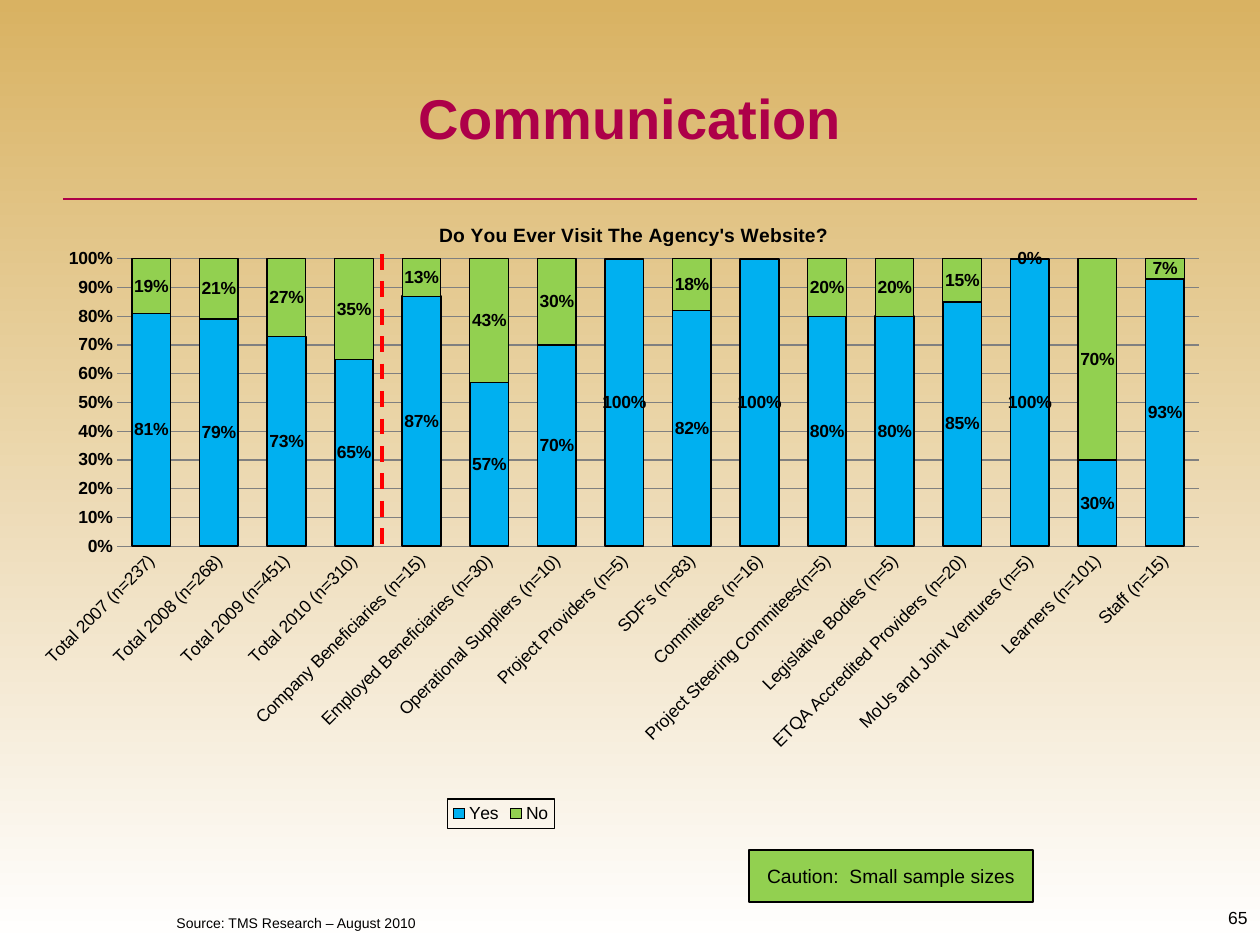
from typing import NamedTuple

from lxml.etree import SubElement
from pptx import Presentation
from pptx.chart.data import CategoryChartData
from pptx.dml.color import RGBColor
from pptx.enum.chart import XL_CHART_TYPE, XL_LEGEND_POSITION, XL_TICK_MARK
from pptx.enum.dml import MSO_LINE
from pptx.enum.shapes import MSO_CONNECTOR, MSO_SHAPE
from pptx.enum.text import MSO_ANCHOR, PP_ALIGN
from pptx.oxml import parse_xml
from pptx.oxml.ns import nsdecls, qn
from pptx.util import Emu, Pt

EMU_PER_PX = 914400 / 126
FONT = "Arial"
GOLD = RGBColor(0xD9, 0xB2, 0x62)
WHITE = RGBColor(0xFF, 0xFF, 0xFF)
BLACK = RGBColor(0, 0, 0)
MAROON = RGBColor(0xAD, 0x00, 0x49)
RED = RGBColor(0xFF, 0, 0)
GREY = RGBColor(0x80, 0x80, 0x80)
BLUE = RGBColor(0x00, 0xB0, 0xF0)
GREEN = RGBColor(0x92, 0xD0, 0x50)


class Answer(NamedTuple):
    name: str
    shares: tuple
    color: RGBColor
    border: float


class Rule(NamedTuple):
    start: tuple[int, int]
    end: tuple[int, int]
    color: RGBColor
    weight: float
    dash: MSO_LINE | None = None


GROUPS = (
    "Total 2007 (n=237)", "Total 2008 (n=268)", "Total 2009 (n=451)",
    "Total 2010 (n=310)", "Company Beneficiaries (n=15)",
    "Employed Beneficiaries (n=30)", "Operational Suppliers (n=10)",
    "Project Providers (n=5)", "SDF's (n=83)", "Committees (n=16)",
    "Project Steering Commitees(n=5)", "Legislative Bodies (n=5)",
    "ETQA Accredited Providers (n=20)", "MoUs and Joint Ventures (n=5)",
    "Learners (n=101)", "Staff (n=15)",
)
ANSWERS = (
    Answer("Yes", (0.81, 0.79, 0.73, 0.65, 0.87, 0.57, 0.7, 1, 0.82, 1, 0.8,
                   0.8, 0.85, 1, 0.3, 0.93), BLUE, 1),
    Answer("No", (0.19, 0.21, 0.27, 0.35, 0.13, 0.43, 0.3, None, 0.18, None,
                  0.2, 0.2, 0.15, 0, 0.7, 0.07), GREEN, 0.75),
)
RULES = (
    Rule((63, 199), (1197, 199), MAROON, 0.75),
    Rule((382, 254), (382, 547), RED, 2.25, MSO_LINE.DASH),
)


def px(length: int) -> Emu:
    return Emu(round(length * EMU_PER_PX))


def style_font(font, size: float, color: RGBColor = BLACK, bold: bool = False) -> None:
    font.name = FONT
    font.size = Pt(size)
    font.bold = bold
    font.color.rgb = color


def write(frame, text: str, *, size: float, color: RGBColor = BLACK,
          bold: bool = False, align=PP_ALIGN.LEFT, anchor=MSO_ANCHOR.TOP) -> None:
    frame.word_wrap = True
    frame.vertical_anchor = anchor
    paragraph = frame.paragraphs[0]
    paragraph.alignment = align
    run = paragraph.add_run()
    run.text = text
    style_font(run.font, size, color, bold)


def draw_rule(slide, rule: Rule) -> None:
    connector = slide.shapes.add_connector(
        MSO_CONNECTOR.STRAIGHT, *map(px, rule.start + rule.end))
    connector.line.color.rgb = rule.color
    connector.line.width = Pt(rule.weight)
    if rule.dash:
        connector.line.dash_style = rule.dash
    SubElement(connector._element.spPr, qn("a:effectLst"))


def set_layout(parent, index: int, inner: bool = False, **fractions: float) -> None:
    for old in parent.findall(qn("c:layout")):
        parent.remove(old)
    layout = parse_xml(f"<c:layout {nsdecls('c')}><c:manualLayout/></c:layout>")
    settings = {"layoutTarget": "inner"} if inner else {}
    settings |= {"xMode": "edge", "yMode": "edge"} | fractions
    for tag, value in settings.items():
        SubElement(layout[0], qn(f"c:{tag}")).set("val", str(value))
    parent.insert(index, layout)


def style_answer(series, answer: Answer) -> None:
    series.format.fill.solid()
    series.format.fill.fore_color.rgb = answer.color
    series.format.line.color.rgb = BLACK
    series.format.line.width = Pt(answer.border)
    labels = series.data_labels
    labels.show_value = True
    labels.number_format = "0%"
    labels.number_format_is_linked = False
    style_font(labels.font, 10, bold=True)


def style_axes(chart) -> None:
    groups, share = chart.category_axis, chart.value_axis
    for axis in (groups, share):
        axis.minor_tick_mark = XL_TICK_MARK.NONE
        axis.major_tick_mark = XL_TICK_MARK.NONE
    style_font(groups.tick_labels.font, 10)
    groups.format.line.color.rgb = GREY
    groups._element.find(qn("c:txPr")).find(qn("a:bodyPr")).set("rot", "-2700000")
    style_font(share.tick_labels.font, 10, bold=True)
    share.tick_labels.number_format = "0%"
    share.tick_labels.number_format_is_linked = False
    share.minimum_scale, share.maximum_scale, share.major_unit = 0, 1, 0.1
    share.format.line.fill.background()
    share.has_major_gridlines = True
    share.major_gridlines.format.line.color.rgb = GREY
    share.major_gridlines.format.line.width = Pt(0.75)


def draw_chart(slide) -> None:
    survey = CategoryChartData(number_format="0%")
    survey.categories = GROUPS
    for answer in ANSWERS:
        survey.add_series(answer.name, answer.shares)
    chart = slide.shapes.add_chart(
        XL_CHART_TYPE.COLUMN_STACKED, px(32), px(189), px(1187), px(735), survey).chart
    style_font(chart.font, 18)
    plot = chart.plots[0]
    plot.gap_width, plot.overlap, plot.vary_by_categories = 75, 100, False
    for series, answer in zip(plot.series, ANSWERS):
        style_answer(series, answer)
    style_axes(chart)

    chart.has_title = True
    write(chart.chart_title.text_frame, "Do You Ever Visit The Agency's Website?",
          size=11, bold=True, align=PP_ALIGN.CENTER)
    set_layout(chart.chart_title._element, 1, x=0.34, y=0.04)

    chart.has_legend = True
    legend = chart.legend
    legend.position = XL_LEGEND_POSITION.BOTTOM
    legend.include_in_layout = False
    style_font(legend.font, 10)
    set_layout(legend._element, 1, x=0.35, y=0.83, w=0.09, h=0.04)
    legend._element.find(qn("c:txPr")).addprevious(parse_xml(
        f'<c:spPr {nsdecls("c", "a")}><a:noFill/><a:ln w="9525"><a:solidFill>'
        f'<a:srgbClr val="{BLACK}"/></a:solidFill></a:ln></c:spPr>'))
    plot_area = plot._element.getparent()
    set_layout(plot_area, 0, inner=True, x=0.072, y=0.095, w=0.911, h=0.391)


def main() -> None:
    deck = Presentation()
    deck.slide_width, deck.slide_height = px(1260), px(945)
    slide = deck.slides.add_slide(deck.slide_layouts[5])
    backdrop = slide.background.fill
    backdrop.gradient()
    backdrop.gradient_angle = 270
    for stop, color in zip(backdrop.gradient_stops, (GOLD, WHITE)):
        stop.color.rgb = color

    heading = slide.shapes.title
    heading.left, heading.top, heading.width, heading.height = map(px, (63, 38, 1134, 158))
    write(heading.text_frame, "Communication", size=32, color=MAROON, bold=True,
          align=PP_ALIGN.CENTER, anchor=MSO_ANCHOR.MIDDLE)

    draw_chart(slide)
    for rule in RULES:
        draw_rule(slide, rule)

    caution = slide.shapes.add_shape(
        MSO_SHAPE.RECTANGLE, px(749), px(850), px(284), px(52))
    caution.shadow.inherit = False
    caution.fill.solid()
    caution.fill.fore_color.rgb = GREEN
    caution.line.color.rgb = BLACK
    caution.line.width = Pt(0.75)
    write(caution.text_frame, "Caution:  Small sample sizes", size=11,
          align=PP_ALIGN.CENTER, anchor=MSO_ANCHOR.MIDDLE)

    page_number = slide.shapes.add_textbox(px(1061), px(901), px(199), px(44))
    write(page_number.text_frame, "65", size=10, align=PP_ALIGN.RIGHT)
    source = slide.shapes.add_textbox(px(164), px(908), px(724), px(29))
    write(source.text_frame, "Source: TMS Research – August 2010", size=8,
          anchor=MSO_ANCHOR.BOTTOM)
    deck.save("out.pptx")


if __name__ == "__main__":
    main()
